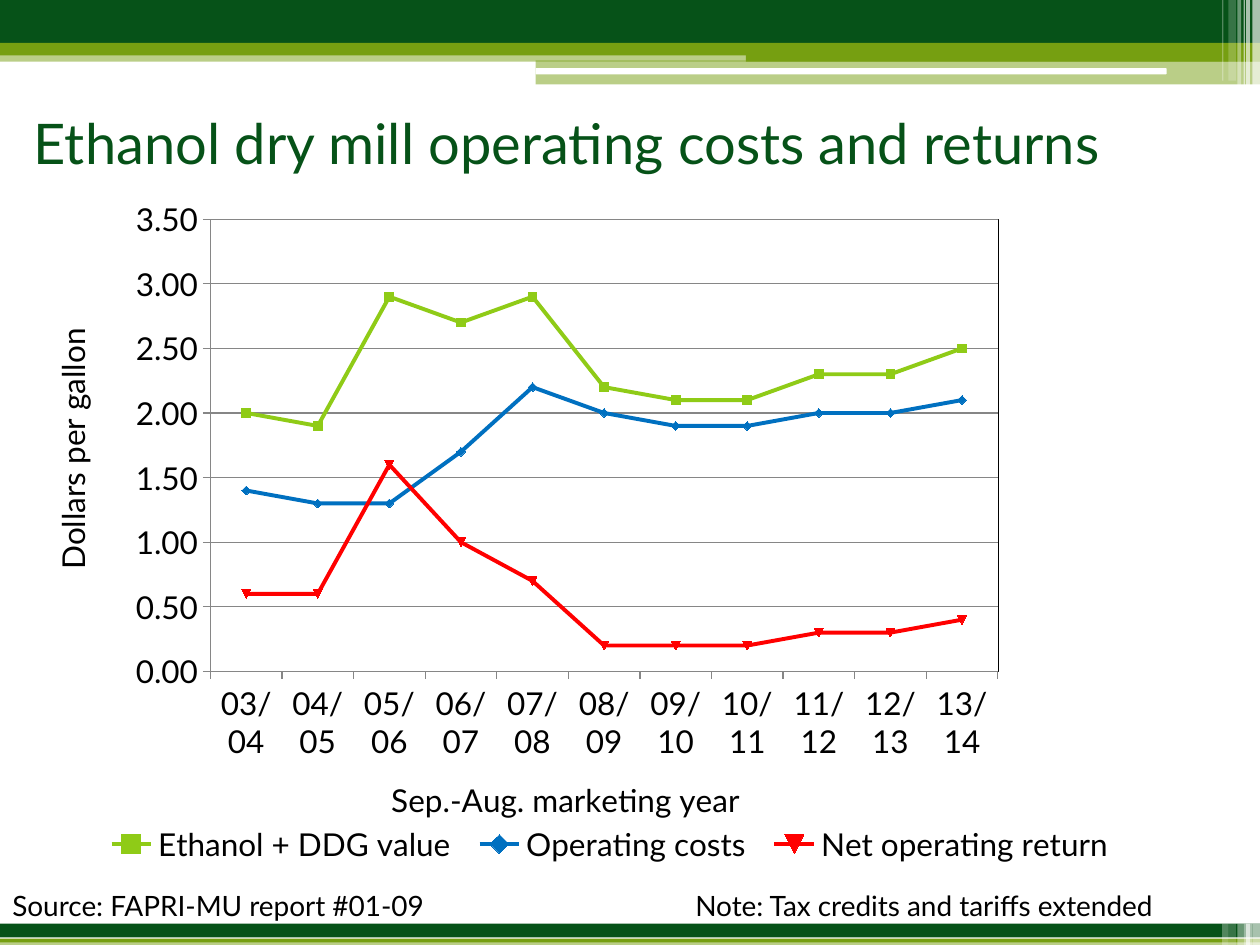
from lxml import etree
from pptx import Presentation
from pptx.chart.data import CategoryChartData
from pptx.dml.color import RGBColor
from pptx.enum.chart import XL_CHART_TYPE, XL_LEGEND_POSITION, XL_MARKER_STYLE, XL_TICK_MARK
from pptx.enum.shapes import MSO_SHAPE
from pptx.enum.text import MSO_ANCHOR
from pptx.oxml.ns import qn
from pptx.util import Inches, Pt

RECT, ROUNDED = MSO_SHAPE.RECTANGLE, MSO_SHAPE.ROUNDED_RECTANGLE
MIDDLE, TOP = MSO_ANCHOR.MIDDLE, MSO_ANCHOR.TOP
LINE_MARKERS = XL_CHART_TYPE.LINE_MARKERS
LEGEND_BOTTOM = XL_LEGEND_POSITION.BOTTOM
TICK_OUTSIDE = XL_TICK_MARK.OUTSIDE
AUTO_MARKER = XL_MARKER_STYLE.AUTOMATIC

DARK, GREEN, WHITE, BLACK, GRAY = "065218", "769F11", "FFFFFF", "000000", "868686"
CHART_WIDTH, CHART_HEIGHT = 9.08, 5.56

BANDS = [
    (0, 0.4, 10, 0.09, GREEN, 50),
    (0, 0, 10, 0.34, DARK, 100),
    (0, 0.34, 10, 0.1, GREEN, 100),
    (5.92, 0.39, 4.08, 0.1, GREEN, 100),
    (4.25, 0.48, 5.75, 0.19, GREEN, 50),
]
FOOTER_BANDS = [
    (0, 7.47, 10, 0.03, GREEN, 50),
    (0, 7.33, 10, 0.11, DARK, 100),
    (0, 7.45, 10, 0.03, GREEN, 100),
]
STRIPES = [
    (9.94, 0.06, 0.06, 0.68, 65),
    (9.89, 0.03, 0.05, 0.68, 65),
    (9.87, 0.01, 0.05, 0.68, 60),
    (9.82, 0.03, 0.05, 0.68, 40),
    (9.75, 0.06, 0.06, 0.64, 20),
    (9.7, 0.01, 0.05, 0.64, 30),
]
YEARS = [f"{year:02}/{year + 1:02}" for year in range(3, 14)]
SERIES = [
    ("Ethanol + DDG value", "8FCB17", [2, 1.9, 2.9, 2.7, 2.9, 2.2, 2.1, 2.1, 2.3, 2.3, 2.5]),
    ("Operating costs", "0070C0", [1.4, 1.3, 1.3, 1.7, 2.2, 2, 1.9, 1.9, 2, 2, 2.1]),
    ("Net operating return", "FF0000", [0.6, 0.6, 1.6, 1, 0.7, 0.2, 0.2, 0.2, 0.3, 0.3, 0.4]),
]


def color(value):
    return RGBColor.from_string(value)


def paint(fill, value):
    fill.solid()
    fill.fore_color.rgb = color(value)


def set_layout(parent, index, left, top, width=None, height=None, target=None):
    old = parent.find(qn("c:layout"))
    if old is not None:
        parent.remove(old)
    layout = etree.Element(qn("c:layout"))
    parent.insert(index, layout)
    manual = etree.SubElement(layout, qn("c:manualLayout"))
    settings = {"layoutTarget": target, "xMode": "edge", "yMode": "edge",
                "x": left / CHART_WIDTH, "y": top / CHART_HEIGHT}
    if width:
        settings.update(w=width / CHART_WIDTH, h=height / CHART_HEIGHT)
    for name, value in settings.items():
        if value is not None:
            etree.SubElement(manual, qn(f"c:{name}"), val=str(value))


class SlideBuilder:
    font = "Lato"

    def __init__(self, page):
        self.page = page

    def style(self, font, size, value):
        font.name, font.size, font.bold = self.font, Pt(size), False
        font.color.rgb = color(value)

    def bar(self, left, top, width, height, value, opacity=100, kind=RECT):
        shape = self.page.shapes.add_shape(
            kind, Inches(left), Inches(top), Inches(width), Inches(height))
        shape.shadow.inherit = False
        shape.line.fill.background()
        paint(shape.fill, value)
        if opacity < 100:
            tint = shape.fill._xPr.find(qn("a:solidFill"))[0]
            etree.SubElement(tint, qn("a:alpha"), val=str(opacity * 1000))

    def text(self, left, top, width, height, words, size, value, anchor=TOP, tab=None):
        box = self.page.shapes.add_textbox(
            Inches(left), Inches(top), Inches(width), Inches(height))
        frame = box.text_frame
        frame.word_wrap = True
        frame.vertical_anchor = anchor
        paragraph = frame.paragraphs[0]
        paragraph.text = words
        self.style(paragraph.font, size, value)
        if tab:
            stops = etree.Element(qn("a:tabLst"))
            etree.SubElement(stops, qn("a:tab"), pos=str(Inches(tab)), algn="l")
            paragraph._p.get_or_add_pPr().insert(0, stops)

    def axis(self, axis, words, left, top):
        paragraph = axis.axis_title.text_frame.paragraphs[0]
        paragraph.text = words
        self.style(paragraph.font, 18, BLACK)
        set_layout(axis.axis_title._element, 1, left, top)
        axis.major_tick_mark = TICK_OUTSIDE
        paint(axis.format.line.fill, GRAY)
        self.style(axis.tick_labels.font, 18, BLACK)

    def line_chart(self, left, top):
        data = CategoryChartData(number_format="0.00")
        data.categories = YEARS
        for name, _, values in SERIES:
            data.add_series(name, values)
        chart = self.page.shapes.add_chart(
            LINE_MARKERS, Inches(left), Inches(top),
            Inches(CHART_WIDTH), Inches(CHART_HEIGHT), data).chart
        self.style(chart.font, 18, BLACK)
        chart.has_title = False
        chart.has_legend = True
        chart.legend.position = LEGEND_BOTTOM
        chart.legend.include_in_layout = False
        self.style(chart.legend.font, 18, BLACK)
        set_layout(chart.legend._element, 1, 0.49, 4.98, 8.2, 0.38)
        self.axis(chart.category_axis, "Sep.-Aug. marketing year", 2.81, 4.59)
        self.axis(chart.value_axis, "Dollars per gallon", 0.1, 1.03)
        scale = chart.value_axis
        scale.minimum_scale, scale.maximum_scale, scale.major_unit = 0, 3.5, 0.5
        scale.tick_labels.number_format = "#,##0.00"
        scale.tick_labels.number_format_is_linked = False
        scale.has_major_gridlines = True
        paint(scale.major_gridlines.format.line.fill, GRAY)
        plot = chart.plots[0]
        plot.vary_by_categories = False
        for series, (_, value, _) in zip(plot.series, SERIES):
            series.smooth = False
            series.format.line.width = Pt(2.25)
            paint(series.format.line.fill, value)
            series.marker.style, series.marker.size = AUTO_MARKER, 5
            paint(series.marker.format.fill, value)
            paint(series.marker.format.line.fill, value)
        area = chart._chartSpace.chart.plotArea
        set_layout(area, 0, 1.42, 0.21, 6.25, 3.59, "inner")
        border = etree.SubElement(etree.SubElement(area, qn("c:spPr")), qn("a:ln"), w="3175")
        fill = etree.SubElement(border, qn("a:solidFill"))
        etree.SubElement(fill, qn("a:srgbClr"), val=BLACK)


def main():
    deck = Presentation()
    deck.slide_width, deck.slide_height = Inches(10), Inches(7.5)
    builder = SlideBuilder(deck.slides.add_slide(deck.slide_layouts[6]))
    for band in BANDS:
        builder.bar(*band)
    builder.bar(4.25, 0.54, 5.01, 0.05, WHITE, kind=ROUNDED)
    for left, width, _, height, opacity in STRIPES:
        builder.bar(left, 0, width, height, WHITE, opacity)
    for band in FOOTER_BANDS:
        builder.bar(*band)
    for left, _, width, _, opacity in STRIPES:
        builder.bar(left, 7.33, width, 0.17, WHITE, opacity)
    builder.text(0.17, 0.75, 9.58, 0.75, "Ethanol dry mill operating costs and returns",
                 32, DARK, MIDDLE)
    builder.line_chart(0.25, 1.53)
    builder.text(0, 7, 9.92, 0.37,
                 "Source: FAPRI-MU report #01-09\tNote: Tax credits and tariffs extended",
                 16, BLACK, tab=5.42)
    deck.save("out.pptx")


if __name__ == "__main__":
    main()
